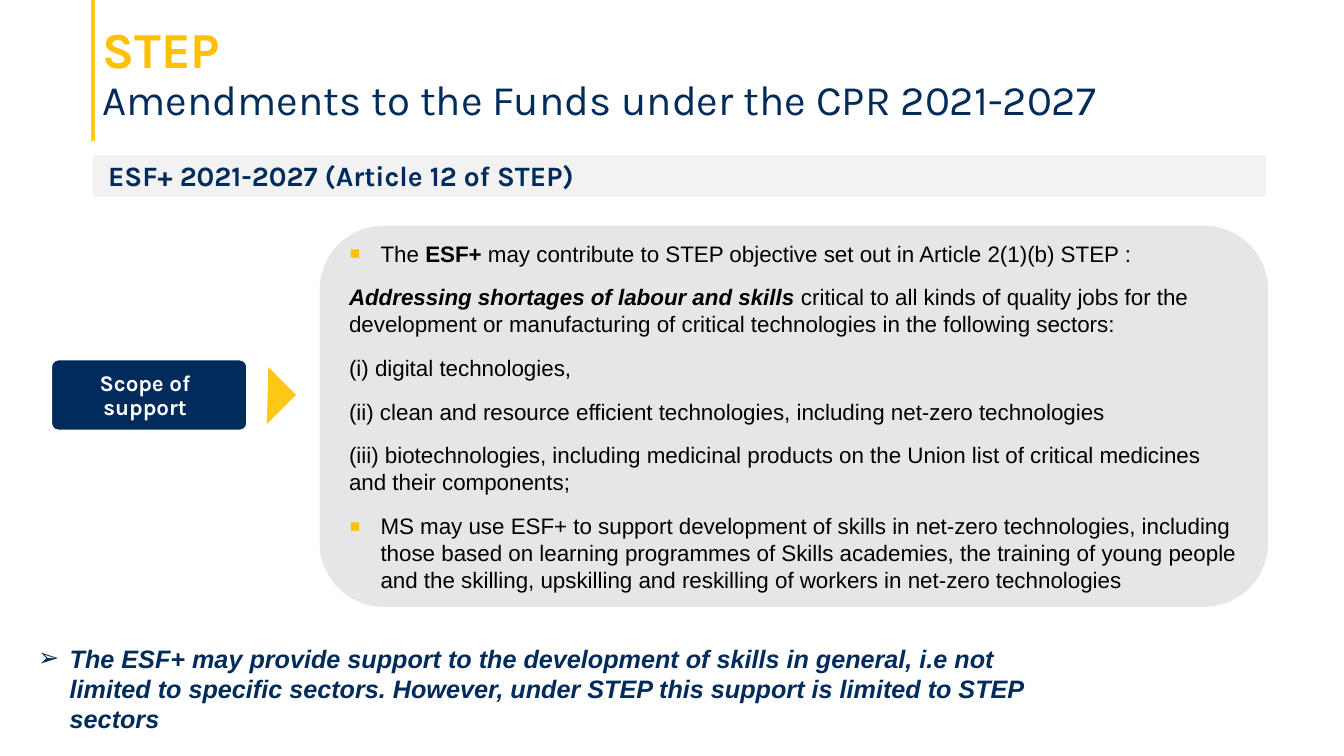
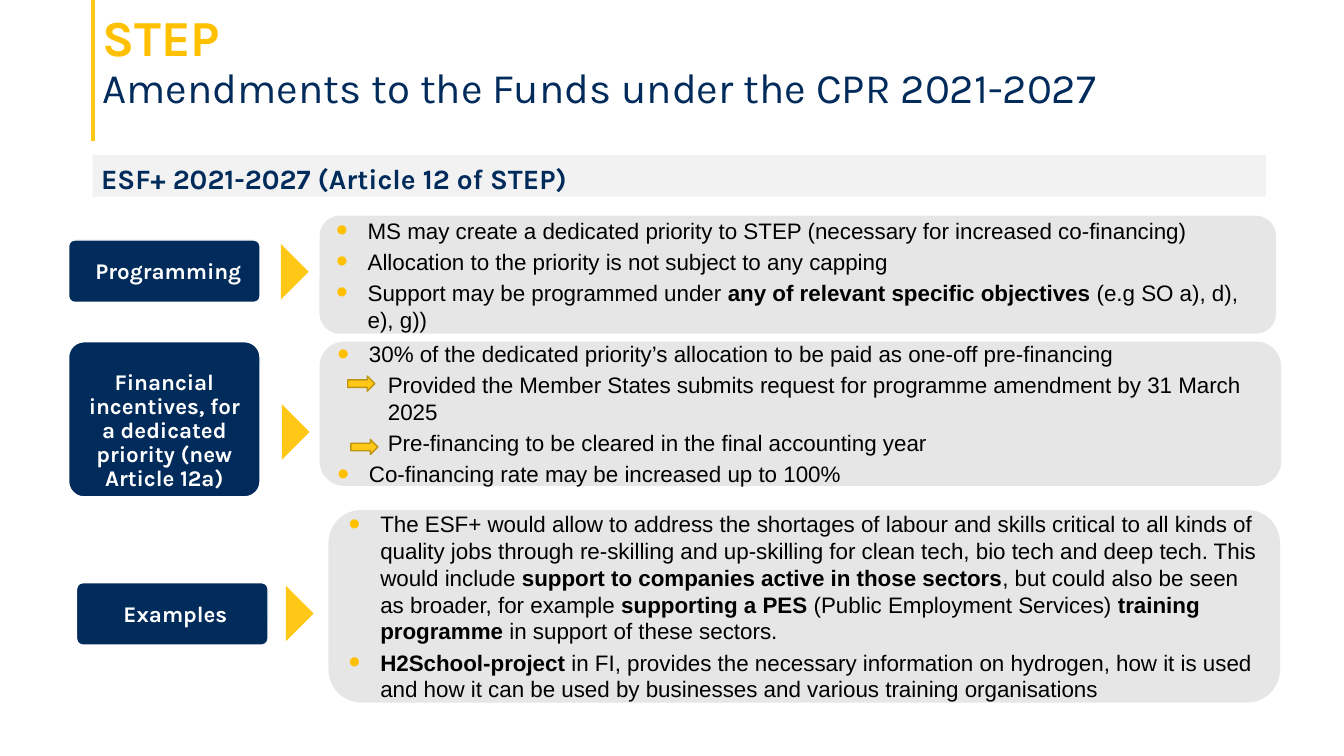
import pptx
import pptx.util
import pptx.dml.color
import pptx.enum.shapes
import pptx.enum.text
import pptx.oxml.ns
import lxml.etree

Pt = pptx.util.Pt
SHAPE = pptx.enum.shapes.MSO_SHAPE
ANCHOR = pptx.enum.text.MSO_ANCHOR
ALIGN = pptx.enum.text.PP_ALIGN
COLOURS = {
    "navy": "002B5B", "yellow": "FFC817", "gold": "FFC000", "bronze": "BD9411",
    "band": "F2F2F2", "panel": "E7E6E6", "white": "FFFFFF", "black": "000000",
}
INDENT = 22.5


def add_box(page, kind, place, fill, line=None, width=1):
    """Add a flat preset shape; place is left, top, width, height."""
    box = page.shapes.add_shape(kind, *[Pt(length) for length in place])
    box.shadow.inherit = False
    box.fill.solid()
    box.fill.fore_color.rgb = pptx.dml.color.RGBColor.from_string(COLOURS[fill])
    if line:
        box.line.color.rgb = pptx.dml.color.RGBColor.from_string(COLOURS[line])
        box.line.width = Pt(width)
    else:
        box.line.fill.background()
    return box


def style_para(para, size, colour, font="Arial", bold=None, italic=None, bullet=None,
               bullet_size=100, left=0, hanging=0):
    """Set indent and bullet, then the font; *starred* words become bold."""
    properties = para._p.get_or_add_pPr()
    properties.set("marL", str(Pt(left)))
    properties.set("indent", str(-Pt(hanging)))
    if bullet:
        if bullet_size != 100:
            tint = lxml.etree.SubElement(properties, pptx.oxml.ns.qn("a:buClr"))
            lxml.etree.SubElement(tint, pptx.oxml.ns.qn("a:srgbClr"), val=COLOURS["gold"])
            lxml.etree.SubElement(properties, pptx.oxml.ns.qn("a:buSzPct"),
                                  val=str(bullet_size * 1000))
        lxml.etree.SubElement(properties, pptx.oxml.ns.qn("a:buFont"), typeface="Arial")
        lxml.etree.SubElement(properties, pptx.oxml.ns.qn("a:buChar"), char=bullet)
    pieces = para.text.split("*")
    para.text = ""
    for number, piece in enumerate(pieces):
        if piece:
            span = para.add_run()
            span.text = piece
            span.font.name = font
            span.font.size = Pt(size)
            span.font.bold = bold or number % 2 == 1
            span.font.italic = bool(italic and (bold or number % 2 == 1))
            span.font.color.rgb = pptx.dml.color.RGBColor.from_string(COLOURS[colour])


# Label: place, inset from the top, shift to the right, text
# Panel: place, bullet, space before and after, paragraphs as (kind, text)
SLIDES = [
    {
        "title_top": 18, "band_inset": (11, 2.2),
        "labels": [((36.7, 257, 139.7, 50.4), 7.2, -2.9, "Scope of support")],
        "triangles": [(177.1, 267.8, 28.1, 29.5)],
        "panels": [((229, 162, 676.1, 270.7), "▪", 6, 6, [
            ("bullet", "The *ESF+* may contribute to STEP objective set out in Article 2(1)(b) STEP :"),
            ("plain", "*Addressing shortages of labour and skills *critical to all kinds of quality "
                      "jobs for the development or manufacturing of critical technologies in the "
                      "following sectors:"),
            ("plain", "(i) digital technologies,"),
            ("plain", "(ii) clean and resource efficient technologies, including net-zero technologies"),
            ("plain", "(iii) biotechnologies, including medicinal products on the Union list of "
                      "critical medicines and their components;"),
            ("bullet", "MS may use ESF+ to support development of skills in net-zero technologies, "
                       "including those based on learning programmes of Skills academies, the "
                       "training of young people and the skilling, upskilling and reskilling of "
                       "workers in net-zero technologies"),
        ])],
        "arrows": [],
        "conclusion": "The ESF+ may provide support to the development of skills in general, i.e not "
                      "limited to specific sectors. However, under STEP this support is limited to "
                      "STEP sectors",
    },
    {
        "title_top": 9.4, "band_inset": (6, 4.5),
        "labels": [
            ((49, 171.4, 136.8, 44.6), 13, 2.9, "Programming"),
            ((49, 244.1, 136.8, 110.9), 17.6, 0, "Financial incentives, for a dedicated "
                                                 "priority (new Article 12a)"),
            ((54.7, 416.2, 136.8, 44.6), 13, 2.2, "Examples"),
        ],
        "triangles": [(186.5, 180, 28.1, 28.1), (187.2, 294.5, 28.1, 28.1),
                      (190.1, 424.1, 28.1, 28.1)],
        "panels": [
            ((229, 154.8, 681.8, 82.8), "•", 0, 3, [
                ("bullet", "MS may create a dedicated priority to STEP (necessary for increased "
                           "co-financing)"),
                ("bullet", "Allocation to the priority is not subject to any capping"),
                ("bullet", "Support may be programmed under *any of relevant specific objectives "
                           "*(e.g SO a), d), e), g))"),
            ]),
            ((229, 244.8, 685.4, 101.5), "•", 0, 3, [
                ("bullet", "30% of the dedicated priority’s allocation to be paid as one-off "
                           "pre-financing"),
                ("step", "Provided the Member States submits request for programme amendment by "
                         "31 March 2025"),
                ("step", "Pre-financing to be cleared in the final accounting year"),
                ("bullet", "Co-financing rate may be increased up to 100%"),
            ]),
            ((235.4, 365, 678.2, 136.1), "•", 0, 3, [
                ("bullet", "The ESF+ would allow to address the shortages of labour and skills "
                           "critical to all kinds of quality jobs through re-skilling and "
                           "up-skilling for clean tech, bio tech and deep tech. This would include "
                           "*support to companies active in those sectors*, but could also be seen "
                           "as broader, for example *supporting a PES *(Public Employment Services) "
                           "*training programme* in support of these sectors."),
                ("bullet", "*H2School-project* in FI, provides the necessary information on "
                           "hydrogen, how it is used and how it can be used by businesses and "
                           "various training organisations"),
            ]),
        ],
        "arrows": [(248.4, 268.6), (250.6, 313.9)],
        "conclusion": None,
    },
]

deck = pptx.Presentation()
deck.slide_width, deck.slide_height = Pt(960), Pt(540)

for content in SLIDES:
    page = deck.slides.add_slide(deck.slide_layouts[6])

    # Yellow rule beside the title
    rule = page.shapes.add_connector(pptx.enum.shapes.MSO_CONNECTOR.STRAIGHT,
                                     Pt(66.5), Pt(0), Pt(66.5), Pt(100.8))
    rule.line.color.rgb = pptx.dml.color.RGBColor.from_string(COLOURS["yellow"])
    rule.line.width = Pt(2.25)
    lxml.etree.SubElement(rule._element.spPr, pptx.oxml.ns.qn("a:effectLst"))

    # Title
    title = page.shapes.add_textbox(Pt(66.2), Pt(content["title_top"]), Pt(828), Pt(72))
    frame = title.text_frame
    frame.word_wrap = True
    frame.margin_top = frame.margin_bottom = 0
    frame.text = "STEP\nAmendments to the Funds under the CPR 2021-2027"
    for para, size, colour, bold in zip(frame.paragraphs, (36, 30), ("gold", "navy"), (True, False)):
        para.line_spacing = 0.9
        style_para(para, size, colour, "Karla", bold)

    # Heading band
    band = add_box(page, SHAPE.RECTANGLE, (66.2, 110.9, 838.1, 29.5), "band")
    frame = band.text_frame
    frame.vertical_anchor = ANCHOR.TOP
    frame.margin_left, frame.margin_top = [Pt(inset) for inset in content["band_inset"]]
    frame.margin_bottom = 0
    frame.text = "ESF+ 2021-2027 (Article 12 of STEP)"
    frame.paragraphs[0].alignment = ALIGN.LEFT
    style_para(frame.paragraphs[0], 20, "navy", "Karla", True)

    # Navy labels
    for place, top_inset, shift, text in content["labels"]:
        label = add_box(page, SHAPE.ROUNDED_RECTANGLE, place, "navy", "white")
        label.adjustments[0] = 0.1
        frame = label.text_frame
        frame.vertical_anchor = ANCHOR.TOP
        frame.margin_left, frame.margin_right = Pt(7.2 + shift), Pt(7.2 - shift)
        frame.margin_top, frame.margin_bottom = Pt(top_inset), 0
        frame.text = text
        frame.paragraphs[0].alignment = ALIGN.CENTER
        frame.paragraphs[0].line_spacing = 0.9
        style_para(frame.paragraphs[0], 16, "white", "Karla", True)

    # Triangles pointing from label to panel
    for place in content["triangles"]:
        add_box(page, SHAPE.RIGHT_TRIANGLE, place, "yellow").rotation = 225

    # Grey text panels
    for place, bullet, before, after, paragraphs in content["panels"]:
        panel = add_box(page, SHAPE.ROUNDED_RECTANGLE, place, "panel", "panel", 1.5)
        frame = panel.text_frame
        frame.vertical_anchor = ANCHOR.MIDDLE
        frame.text = "\n".join(text for kind, text in paragraphs)
        for number, (para, (kind, text)) in enumerate(zip(frame.paragraphs, paragraphs)):
            para.alignment = ALIGN.LEFT
            para.space_before = Pt(before if number else 0)
            para.space_after = Pt(after)
            if kind == "bullet":
                style_para(para, 16, "black", bullet=bullet, bullet_size=150,
                           left=INDENT, hanging=INDENT)
            else:
                style_para(para, 16, "black", italic=kind == "plain",
                           left=36 if kind == "step" else 0)

    # Small arrows marking the steps
    for left, top in content["arrows"]:
        add_box(page, SHAPE.RIGHT_ARROW, (left, top, 19.4, 10.8), "yellow", "bronze")

    # Conclusion
    if content["conclusion"]:
        conclusion = page.shapes.add_textbox(Pt(20.2), Pt(455.8), Pt(733.7), Pt(72.7))
        frame = conclusion.text_frame
        frame.word_wrap = True
        frame.text = content["conclusion"]
        style_para(frame.paragraphs[0], 18, "navy", bold=True, italic=True,
                   bullet="➢", left=INDENT, hanging=INDENT)

deck.save("out.pptx")
